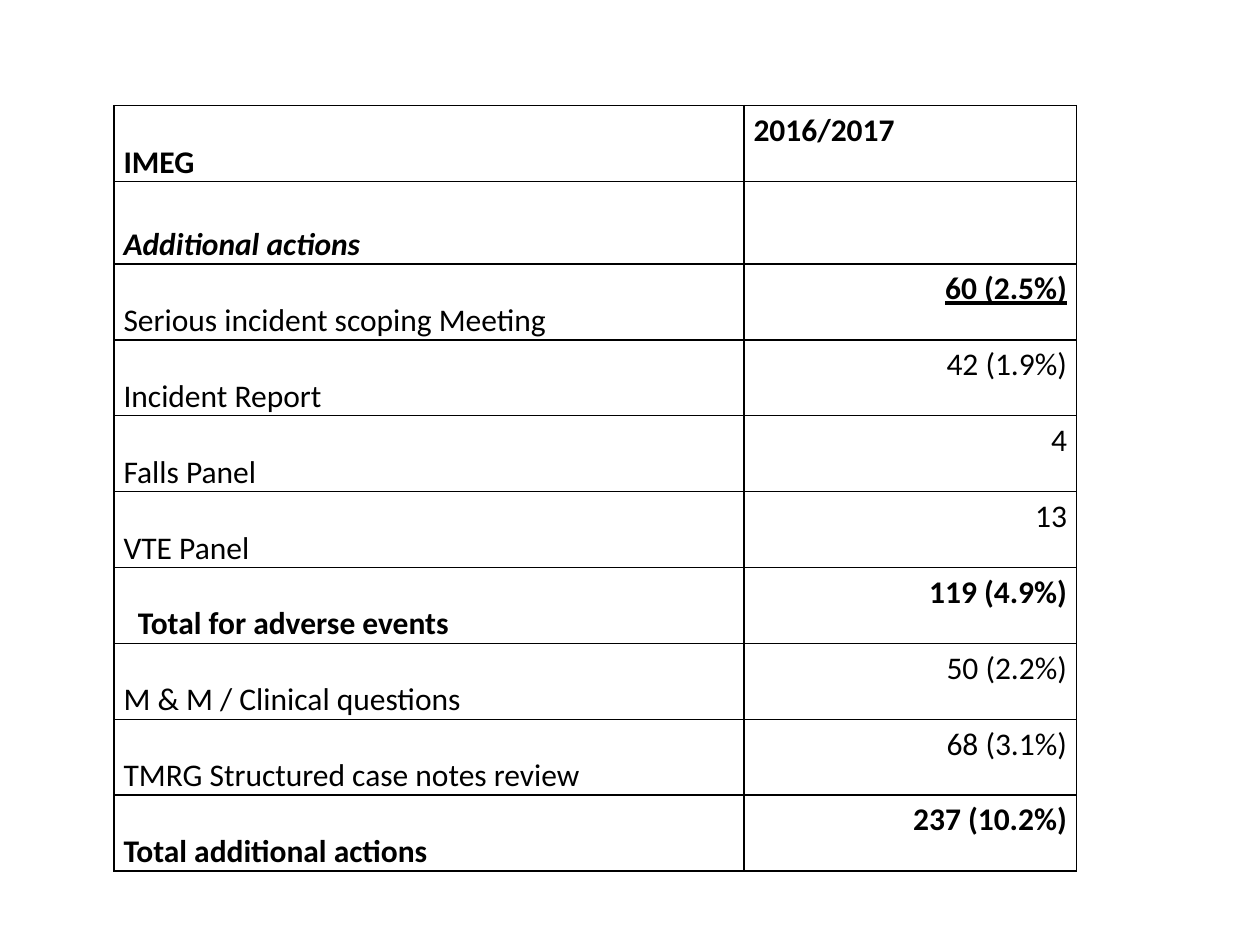
from pptx import Presentation
from pptx.dml.color import RGBColor
from pptx.enum.text import MSO_ANCHOR as Anchor, PP_ALIGN as Align
from pptx.oxml import parse_xml
from pptx.oxml.ns import nsdecls
from pptx.util import Cm, Pt

BLACK = "000000"

# label, value, style: b bold, i italic label, u underlined value
ROWS = [
    ("IMEG", "2016/2017", "b"),
    ("Additional actions", "", "bi"),
    ("Serious incident scoping Meeting", "60 (2.5%)", "u"),
    ("Incident Report", "42 (1.9%)", ""),
    ("Falls Panel", "4", ""),
    ("VTE Panel", "13", ""),
    ("Total for adverse events", "119 (4.9%)", "b"),
    ("M & M / Clinical questions", "50 (2.2%)", ""),
    ("TMRG Structured case notes review", "68 (3.1%)", ""),
    ("Total additional actions", "237 (10.2%)", "b"),
]
INDENT_ROW = 6


def color(code):
    return RGBColor.from_string(code)


def border(cell):
    """Draw a thin black line on all four sides."""
    for side in "LRTB":
        cell._tc.get_or_add_tcPr().append(parse_xml(
            f'<a:ln{side} {nsdecls("a")} w="{Pt(1)}"><a:solidFill>'
            f'<a:srgbClr val="{BLACK}"/></a:solidFill></a:ln{side}>'))


deck = Presentation()
deck.slide_width, deck.slide_height = Cm(25.4), Cm(19.05)
slide = deck.slides.add_slide(deck.slide_layouts[6])

table = slide.shapes.add_table(
    len(ROWS), 2, Cm(2.3), Cm(2.13), Cm(19.4), Cm(15.4)).table
table.first_row = table.horz_banding = False
table.columns[0].width, table.columns[1].width = Cm(12.7), Cm(6.7)

for r, (label, value, style) in enumerate(ROWS):
    table.rows[r].height = Cm(1.66 if r == 1 else 1.53)
    for c, text in enumerate((label, value)):
        cell = table.cell(r, c)
        border(cell)
        cell.fill.background()
        cell.margin_left = cell.margin_right = Cm(0.19)
        cell.margin_top = cell.margin_bottom = 0
        cell.vertical_anchor = Anchor.TOP if c else Anchor.BOTTOM
        cell.text = text
        para = cell.text_frame.paragraphs[0]
        para.line_spacing = 1.15
        para.alignment = Align.RIGHT if c and r else Align.LEFT
        font = para.font
        font.name, font.size = "Calibri", Pt(18)
        font.color.rgb = color(BLACK)
        font.bold = "b" in style or (c == 1 and "u" in style)
        font.italic = c == 0 and "i" in style
        font.underline = c == 1 and "u" in style

total = table.cell(INDENT_ROW, 0).text_frame.paragraphs[0]
total._p.get_or_add_pPr().set("marL", str(Cm(0.29)))

deck.save("out.pptx")
